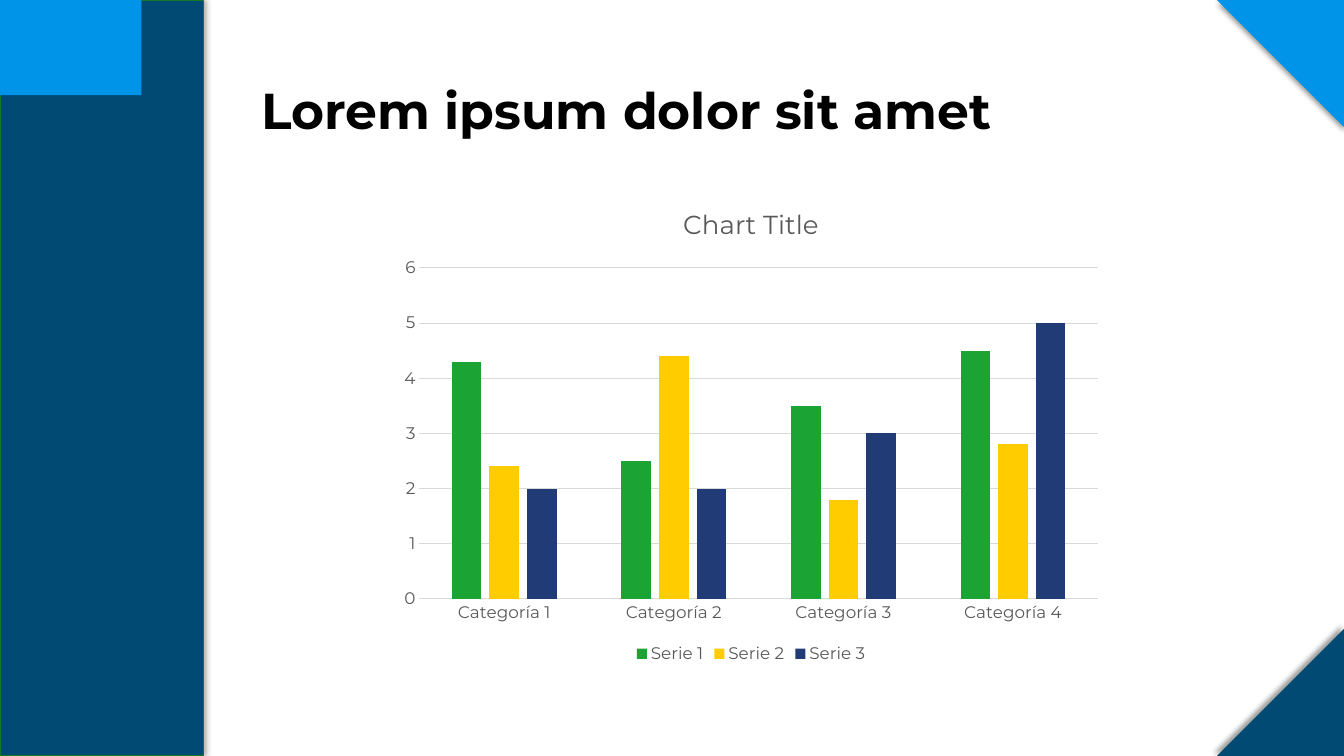
from lxml import etree
from pptx import Presentation
from pptx.chart.data import CategoryChartData as Data
from pptx.dml.color import RGBColor as Color
from pptx.enum.chart import XL_CHART_TYPE as Kind, XL_LEGEND_POSITION as Side
from pptx.enum.chart import XL_TICK_MARK as Tick
from pptx.enum.shapes import MSO_SHAPE as Form
from pptx.enum.text import MSO_ANCHOR as Anchor
from pptx.oxml.ns import qn
from pptx.util import Pt

# Content
TITLE = "Lorem ipsum dolor sit amet"
HEAD = "Chart Title"
CATS = ["Categoría 1", "Categoría 2", "Categoría 3", "Categoría 4"]
ROWS = {
    "Serie 1": (4.3, 2.5, 3.5, 4.5),
    "Serie 2": (2.4, 4.4, 1.8, 2.8),
    "Serie 3": (2, 2, 3, 5),
}

THEME = {
    "font": "Montserrat",
    "sky": "0094E9", "navy": "004A74", "edge": "147926",
    "ink": "000000", "grey": "595959", "rule": "D9D9D9",
    "bars": ("1BA333", "FFCC00", "203B76"),
    "title": 36, "head": 18.6, "label": 12,
}

# Layout, in points
WIDE, HIGH = 960, 540
CUT = 90.75
BAND = (0, 0, 145.5, HIGH)
BLOCK = (0, 0, 101, 68)
TITLE_BOX = (179.5, 29, 715, 104)
CHART_BOX = (278.5, 133, 516, 344)


def pts(box):
    return [Pt(n) for n in box]


def style(font, size, color, bold=False):
    font.name = THEME["font"]
    font.size = Pt(size)
    font.bold = bold
    font.color.rgb = Color.from_string(THEME[color])


def write(frame, text, size, color, bold=False, space=None):
    para = frame.paragraphs[0]
    para.line_spacing = space
    run = para.add_run()
    run.text = text
    style(run.font, size, color, bold)


def paint(shape, fill, line=None, shade=None):
    """Fill a shape; shade is (blur, distance, angle)."""
    shape.shadow.inherit = False
    shape.fill.solid()
    shape.fill.fore_color.rgb = Color.from_string(THEME[fill])
    if line:
        shape.line.color.rgb = Color.from_string(THEME[line])
        shape.line.width = Pt(1)
    else:
        shape.line.fill.background()
    if shade:
        blur, dist, angle = shade
        effects = shape.element.spPr.find(qn("a:effectLst"))
        outer = etree.SubElement(
            effects, qn("a:outerShdw"), blurRad=str(Pt(blur)), dist=str(Pt(dist)),
            dir=str(angle * 60000), algn="ctr", rotWithShape="0")
        tint = etree.SubElement(outer, qn("a:srgbClr"), val=THEME["ink"])
        etree.SubElement(tint, qn("a:alpha"), val="40000")


def corner(shapes, dots, fill, shade):
    first, *rest = [pts(dot) for dot in dots]
    path = shapes.build_freeform(*first, scale=1.0)
    path.add_line_segments(rest, close=True)
    paint(path.convert_to_shape(), fill, shade=shade)


def rule(line):
    line.color.rgb = Color.from_string(THEME["rule"])
    line.width = Pt(0.75)


def plot(shapes):
    data = Data()
    data.categories = CATS
    for name, vals in ROWS.items():
        data.add_series(name, vals)
    chart = shapes.add_chart(Kind.COLUMN_CLUSTERED, *pts(CHART_BOX), data).chart
    style(chart.font, THEME["label"], "grey")

    # Title and legend
    chart.has_title = True
    write(chart.chart_title.text_frame, HEAD, THEME["head"], "grey")
    chart.chart_title.include_in_layout = False
    chart.has_legend = True
    chart.legend.position = Side.BOTTOM
    chart.legend.include_in_layout = False
    style(chart.legend.font, THEME["label"], "grey")

    # Axes
    cat, val = chart.category_axis, chart.value_axis
    for axis in (cat, val):
        axis.major_tick_mark = axis.minor_tick_mark = Tick.NONE
        style(axis.tick_labels.font, THEME["label"], "grey")
    rule(cat.format.line)
    val.format.line.fill.background()
    val.minimum_scale, val.maximum_scale, val.major_unit = 0, 6, 1
    val.has_major_gridlines = True
    rule(val.major_gridlines.format.line)

    # Bars
    bars = chart.plots[0]
    bars.gap_width, bars.overlap = 219, -27
    bars.vary_by_categories = False
    for row, color in zip(bars.series, THEME["bars"]):
        row.invert_if_negative = False
        row.format.fill.solid()
        row.format.fill.fore_color.rgb = Color.from_string(color)


def main():
    deck = Presentation()
    deck.slide_width, deck.slide_height = Pt(WIDE), Pt(HIGH)
    shapes = deck.slides.add_slide(deck.slide_layouts[6]).shapes

    # Corners
    left = WIDE - CUT
    corner(shapes, [(left, 0), (WIDE, 0), (WIDE, CUT)], "sky", (4, 3, 90))
    corner(shapes, [(left, HIGH), (WIDE, HIGH), (WIDE, HIGH - CUT)],
           "navy", (4, 3, 225))

    # Side band
    band = shapes.add_shape(Form.RECTANGLE, *pts(BAND))
    paint(band, "navy", line="edge", shade=(5, 0, 0))
    paint(shapes.add_shape(Form.RECTANGLE, *pts(BLOCK)), "sky")

    # Title
    frame = shapes.add_textbox(*pts(TITLE_BOX)).text_frame
    frame.word_wrap = True
    frame.vertical_anchor = Anchor.MIDDLE
    write(frame, TITLE, THEME["title"], "ink", bold=True, space=0.9)

    plot(shapes)
    deck.save("out.pptx")


if __name__ == "__main__":
    main()
